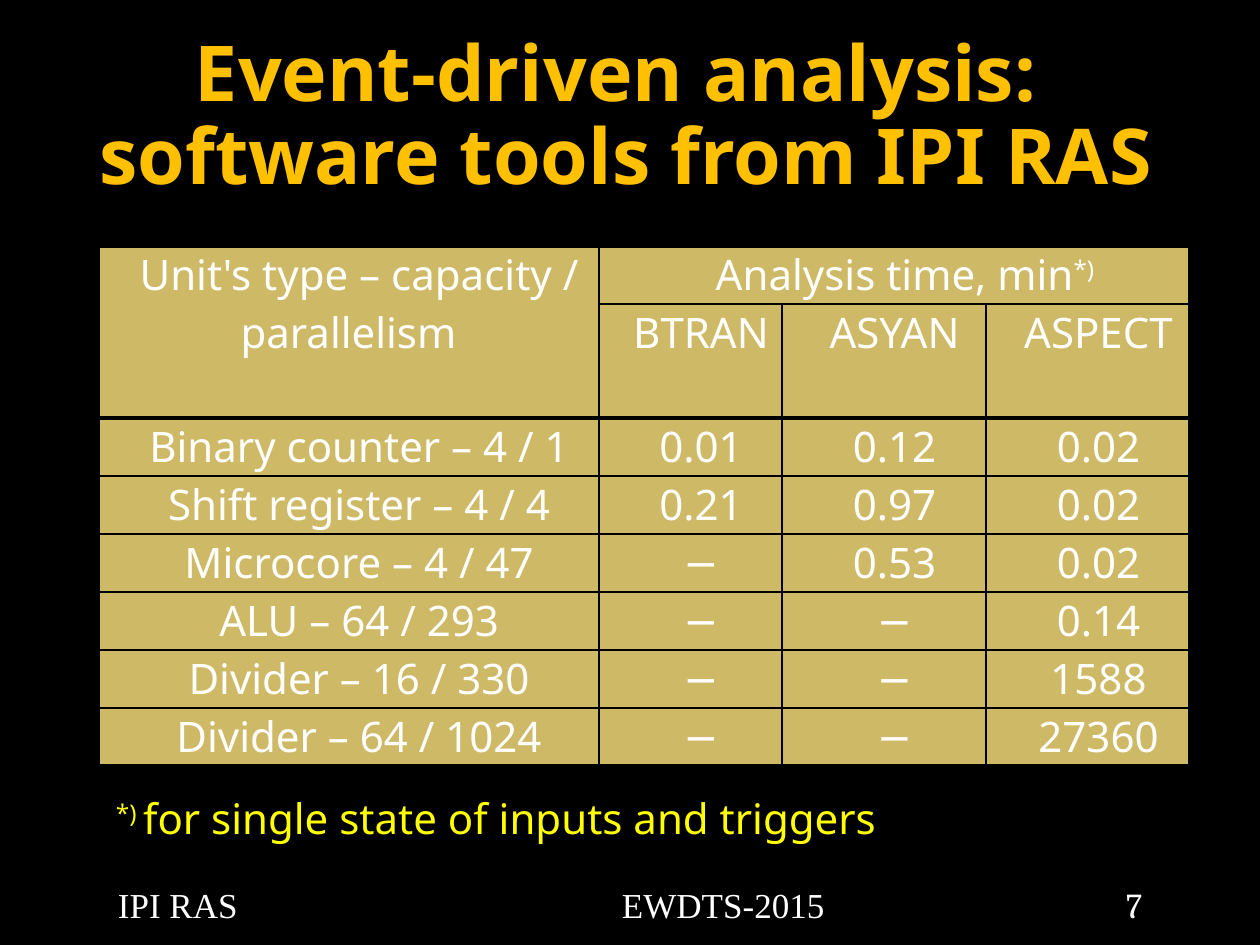
from typing import NamedTuple

from lxml import etree
from pptx import Presentation
from pptx.dml.color import RGBColor
from pptx.enum.text import MSO_ANCHOR, MSO_AUTO_SIZE, PP_ALIGN
from pptx.oxml.ns import qn
from pptx.util import Emu, Pt

CENTER, LEFT = PP_ALIGN.CENTER, PP_ALIGN.LEFT
MIDDLE, TOP = MSO_ANCHOR.MIDDLE, MSO_ANCHOR.TOP
NO_FIT = MSO_AUTO_SIZE.NONE
PX_PER_INCH = 126
SANS, SERIF, DIGIT = "Noto Sans", "Times New Roman", "Cambria"
BLACK, WHITE, GOLD, YELLOW, SAND = "000000", "FFFFFF", "FFC000", "FFFF00", "CEB966"
THICK, THIN = 2.25, 1
SUPER = 30000
MINUS = "−"


class Box(NamedTuple):
    x: int
    y: int
    w: int
    h: int


class Row(NamedTuple):
    unit: str
    btran: str
    asyan: str
    aspect: str


COLUMNS = (501, 183, 204, 204)
ROW_HEIGHT, SUBHEAD_HEIGHT = 58, 114
SUBHEAD_ROW = 1
ROWS = (
    Row("Unit's type – capacity / parallelism", "Analysis time, min", "", ""),
    Row("", "BTRAN", "ASYAN", "ASPECT"),
    Row("Binary counter – 4 / 1", "0.01", "0.12", "0.02"),
    Row("Shift register – 4 / 4", "0.21", "0.97", "0.02"),
    Row("Microcore – 4 / 47", MINUS, "0.53", "0.02"),
    Row("ALU – 64 / 293", MINUS, MINUS, "0.14"),
    Row("Divider – 16 / 330", MINUS, MINUS, "1588"),
    Row("Divider – 64 / 1024", MINUS, MINUS, "27360"),
)


def px(n: int) -> Emu:
    return Emu(round(n * 914400 / PX_PER_INCH))


def color(value: str) -> RGBColor:
    return RGBColor.from_string(value)


def write(p, text: str, size=24, font=SANS, fill=WHITE, bold=False, baseline=0) -> None:
    """Add one formatted run to a paragraph."""
    r = p.add_run()
    r.text = text
    r.font.size, r.font.name, r.font.bold = Pt(size), font, bold
    r.font.color.rgb = color(fill)
    if baseline:
        r.font._element.set("baseline", str(baseline))


def add_text_box(s, box: Box, left: int, top: int):
    """Add a text box with the given left and top insets; return its paragraph."""
    tf = s.shapes.add_textbox(*map(px, box)).text_frame
    tf.word_wrap = True
    tf.vertical_anchor = TOP
    tf.margin_left, tf.margin_top = px(left), px(top)
    p = tf.paragraphs[0]
    p.alignment = LEFT
    return p


def add_tabs(p, *stops: int) -> None:
    tabs = etree.SubElement(p._p.get_or_add_pPr(), qn("a:tabLst"))
    for stop in stops:
        etree.SubElement(tabs, qn("a:tab"), pos=str(px(stop)), algn="l")


def set_borders(cell, **widths: float) -> None:
    tc_pr = cell._tc.get_or_add_tcPr()
    for side, width in widths.items():
        ln = etree.SubElement(tc_pr, qn(f"a:ln{side}"), w=str(Pt(width)))
        fill = etree.SubElement(ln, qn("a:solidFill"))
        etree.SubElement(fill, qn("a:srgbClr"), val=BLACK)


def format_cell(cell, text: str, row: int, col: int) -> None:
    """Fill one cell; the table's outline and the line below its header are thick."""
    last_row = row + (cell.span_height if cell.is_merge_origin else 1) - 1
    last_col = col + (cell.span_width if cell.is_merge_origin else 1) - 1
    set_borders(
        cell,
        L=THICK if col == 0 else THIN,
        R=THICK if last_col == len(COLUMNS) - 1 else THIN,
        T=THICK if row in (0, SUBHEAD_ROW + 1) else THIN,
        B=THICK if last_row in (SUBHEAD_ROW, len(ROWS) - 1) else THIN,
    )
    cell.fill.solid()
    cell.fill.fore_color.rgb = color(SAND)
    cell.margin_left = cell.margin_right = px(2)
    cell.margin_top = cell.margin_bottom = 0
    p = cell.text_frame.paragraphs[0]
    p.alignment = CENTER
    p._p.get_or_add_pPr().set("indent", str(px(21)))
    write(p, text)


def add_results_table(s, x: int, y: int) -> None:
    heights = [SUBHEAD_HEIGHT if i == SUBHEAD_ROW else ROW_HEIGHT for i in range(len(ROWS))]
    box = Box(x, y, sum(COLUMNS), sum(heights))
    table = s.shapes.add_table(len(ROWS), len(COLUMNS), *map(px, box)).table
    table.first_row = table.horz_banding = False
    for column, width in zip(table.columns, COLUMNS):
        column.width = px(width)
    for line, height in zip(table.rows, heights):
        line.height = px(height)
    table.cell(0, 0).merge(table.cell(SUBHEAD_ROW, 0))
    table.cell(0, 1).merge(table.cell(0, len(COLUMNS) - 1))
    for i, row in enumerate(ROWS):
        for j, text in enumerate(row):
            cell = table.cell(i, j)
            if not cell.is_spanned:
                format_cell(cell, text, i, j)
    write(table.cell(0, 1).text_frame.paragraphs[0], "*)", baseline=SUPER)


def add_title(s, box: Box, lines: tuple[str, ...]) -> None:
    title = s.shapes.title
    title.left, title.top, title.width, title.height = map(px, box)
    tf = title.text_frame
    tf.auto_size = NO_FIT
    tf.vertical_anchor = MIDDLE
    p = tf.paragraphs[0]
    p.alignment = CENTER
    p.line_spacing = 0.9
    for i, line in enumerate(lines):
        if i:
            p.add_line_break()
        write(p, line, size=44, fill=GOLD, bold=True)


def main() -> None:
    prs = Presentation()
    prs.slide_width, prs.slide_height = px(1260), px(945)
    s = prs.slides.add_slide(prs.slide_layouts[5])
    s.background.fill.solid()
    s.background.fill.fore_color.rgb = color(BLACK)

    add_title(s, Box(59, 0, 1134, 236), ("Event-driven analysis: ", "software tools from IPI RAS"))

    footer = add_text_box(s, Box(39, 837, 1182, 108), left=79, top=46)
    add_tabs(footer, 504, 1008)
    write(footer, "IPI RAS\tEWDTS-2015\t", size=20, font=SERIF)
    write(footer, "7", size=20, font=DIGIT)

    add_results_table(s, 98, 246)

    note = add_text_box(s, Box(78, 787, 1113, 64), left=38, top=6)
    write(note, "*) ", fill=YELLOW, baseline=SUPER)
    write(note, "for single state of inputs and triggers", fill=YELLOW)

    prs.save("out.pptx")


if __name__ == "__main__":
    main()
